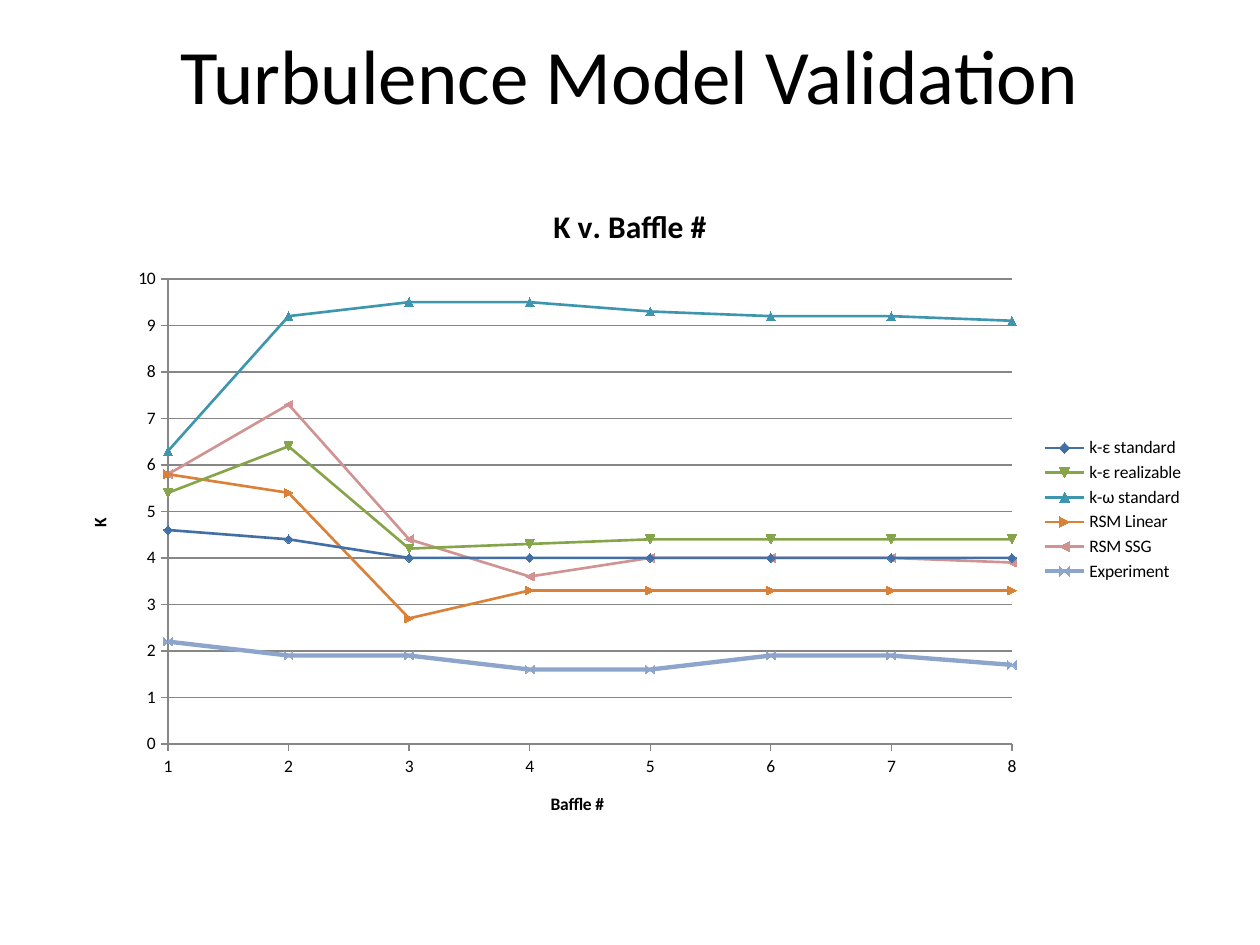
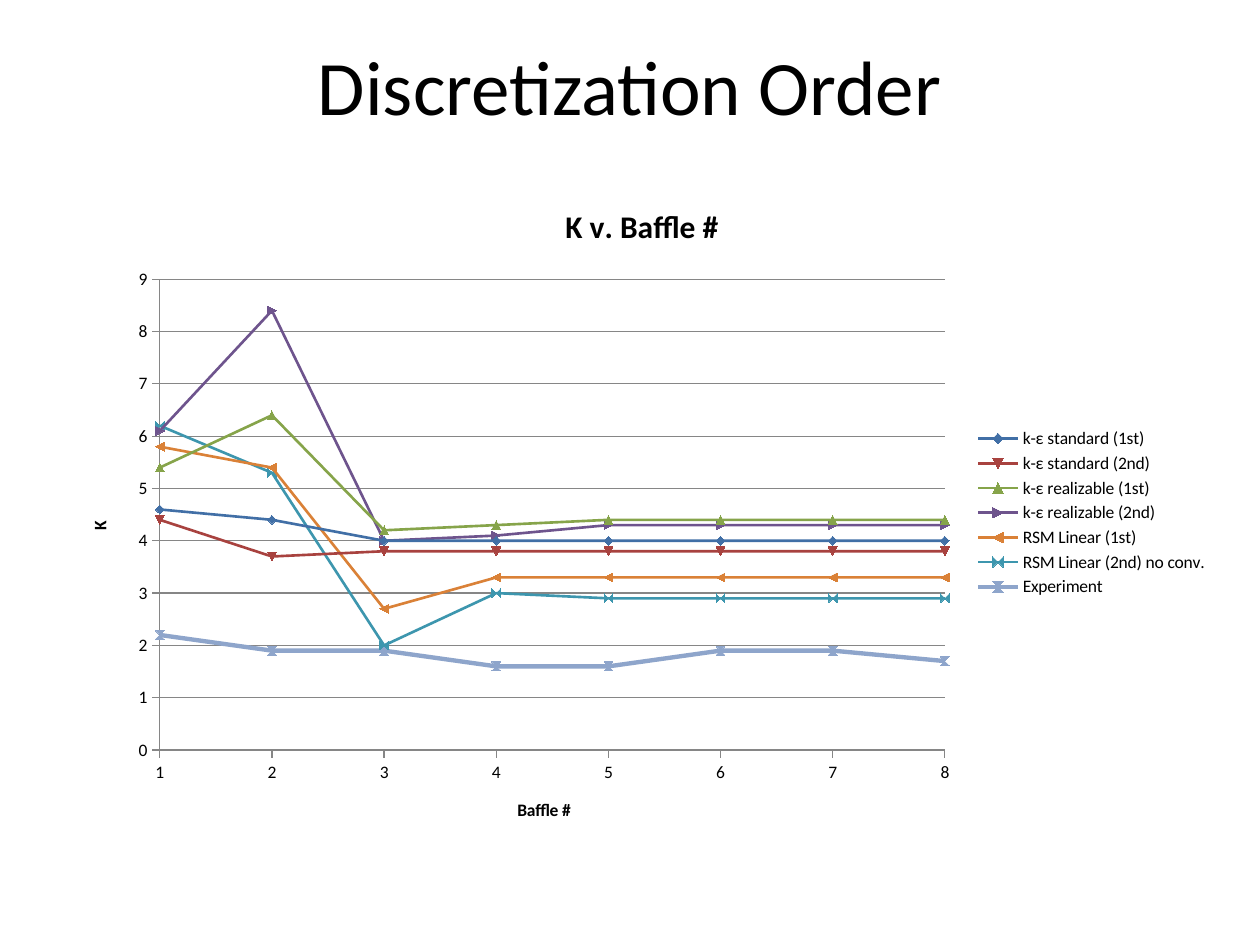
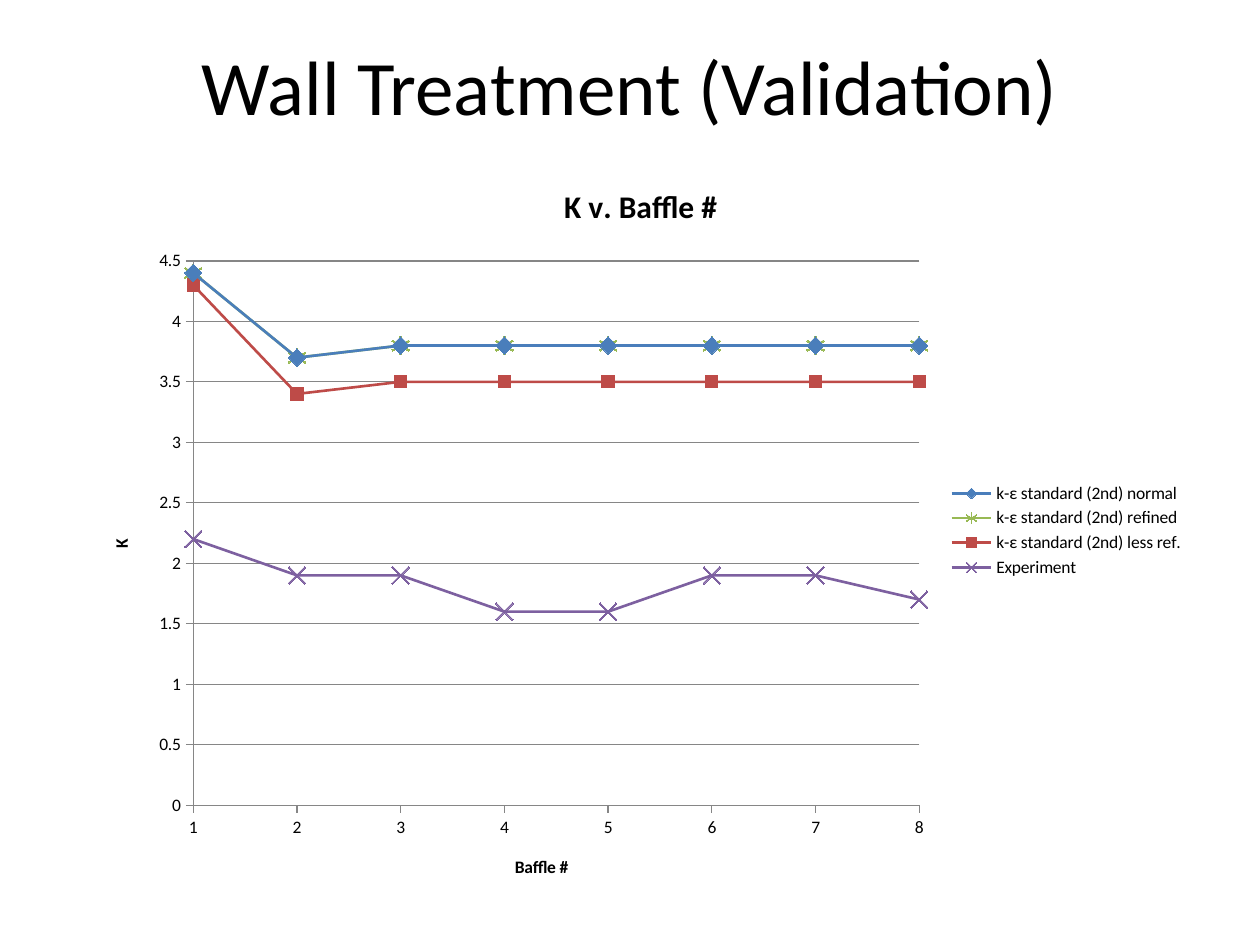
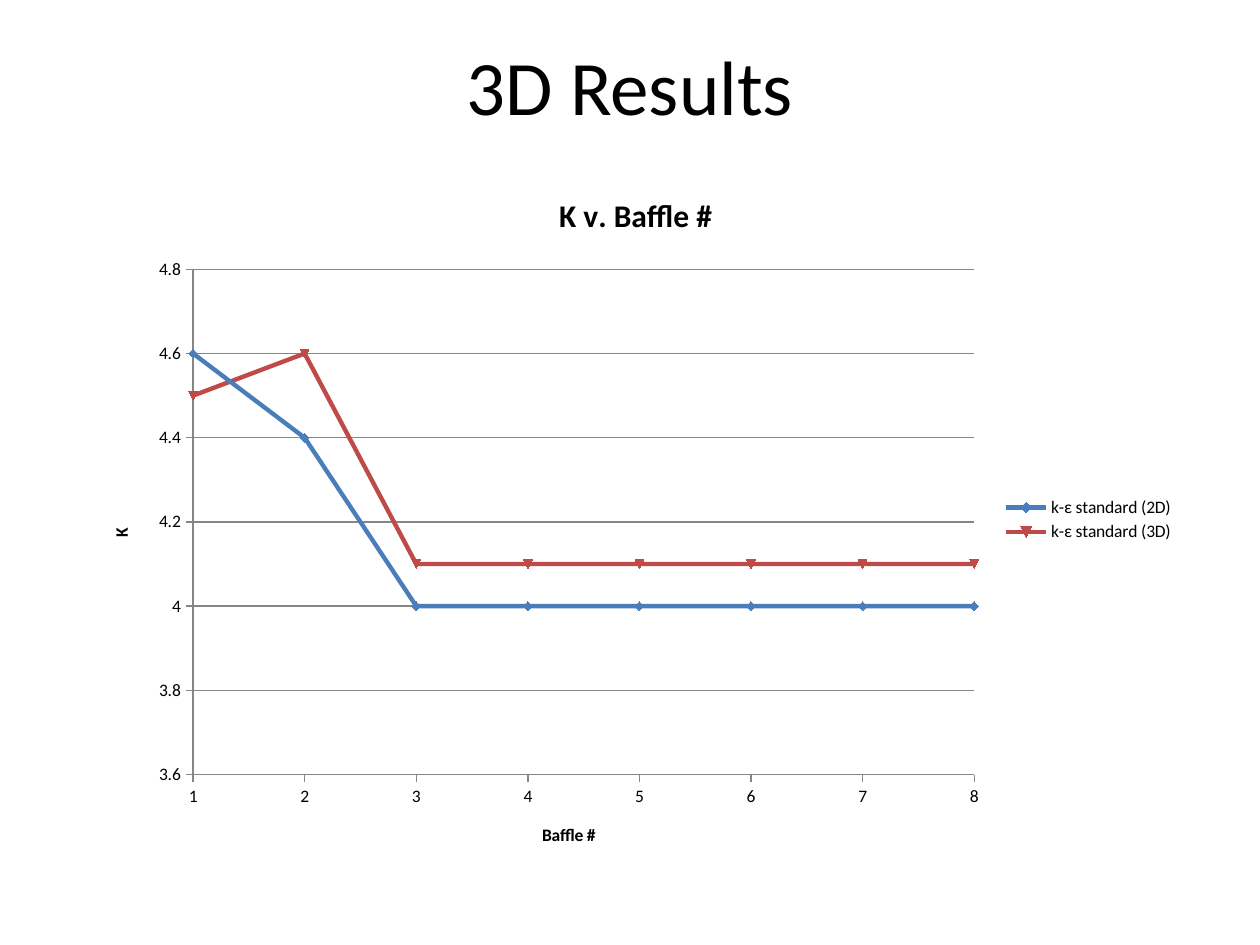
import pptx
import pptx.util
import pptx.dml.color
import pptx.chart.data
import pptx.enum.chart
import pptx.enum.text

Inches = pptx.util.Inches
Pt = pptx.util.Pt
MARK = pptx.enum.chart.XL_MARKER_STYLE

HUES = {
    "text": "000000", "grid": "868686",
    "blue": "416FA6", "red": "A8423F", "green": "86A44A", "purple": "6E548D",
    "teal": "3D96AE", "orange": "DA8137", "pink": "D19392", "pale": "8EA5CB",
    "sky": "4A7EBB", "brick": "BE4B48", "lime": "98B954", "violet": "7D60A0",
}
FONT = "Calibri"
THIN, THICK = 1.5, 2.5

STANDARD = [4.6, 4.4, 4, 4, 4, 4, 4, 4]
SECOND = [4.4, 3.7, 3.8, 3.8, 3.8, 3.8, 3.8, 3.8]
REAL = [5.4, 6.4, 4.2, 4.3, 4.4, 4.4, 4.4, 4.4]
LINEAR = [5.8, 5.4, 2.7, 3.3, 3.3, 3.3, 3.3, 3.3]
TEST = [2.2, 1.9, 1.9, 1.6, 1.6, 1.9, 1.9, 1.7]

SLIDES = [
    dict(title="Turbulence Model Validation", height=0.83,
         box=(0.5, 1.42, 9, 5.25), scale=(0, 10, 1), series=[
             ("k-ε standard", STANDARD, "blue", THIN, None),
             ("k-ε realizable", REAL, "green", THIN, None),
             ("k-ω standard", [6.3, 9.2, 9.5, 9.5, 9.3, 9.2, 9.2, 9.1], "teal", THIN, None),
             ("RSM Linear", LINEAR, "orange", THIN, None),
             ("RSM SSG", [5.8, 7.3, 4.4, 3.6, 4, 4, 4, 3.9], "pink", THIN, None),
             ("Experiment", TEST, "pale", THICK, None)]),
    dict(title="Discretization Order", height=1,
         box=(0.5, 1.42, 9.19, 5.3), scale=(0, 9, 1), series=[
             ("k-ε standard (1st)", STANDARD, "blue", THIN, None),
             ("k-ε standard (2nd)", SECOND, "red", THIN, None),
             ("k-ε realizable (1st)", REAL, "green", THIN, None),
             ("k-ε realizable (2nd)", [6.1, 8.4, 4, 4.1, 4.3, 4.3, 4.3, 4.3], "purple", THIN, None),
             ("RSM Linear (1st)", LINEAR, "orange", THIN, None),
             ("RSM Linear (2nd) no conv.", [6.2, 5.3, 2, 3, 2.9, 2.9, 2.9, 2.9], "teal", THIN, None),
             ("Experiment", TEST, "pale", THICK, None)]),
    dict(title="Wall Treatment (Validation)", height=1,
         box=(0.67, 1.25, 8.83, 5.92), scale=(0, 4.5, 0.5), series=[
             ("k-ε standard (2nd) normal", SECOND, "sky", THIN, (MARK.DIAMOND, 10)),
             ("k-ε standard (2nd) refined", SECOND, "lime", THIN, (MARK.STAR, 10)),
             ("k-ε standard (2nd) less ref.", [4.3, 3.4, 3.5, 3.5, 3.5, 3.5, 3.5, 3.5],
              "brick", THIN, (MARK.SQUARE, 7)),
             ("Experiment", TEST, "violet", THIN, (MARK.X, 10))]),
    dict(title="3D Results", height=1,
         box=(0.67, 1.33, 8.75, 5.59), scale=(3.6, 4.8, 0.2), series=[
             ("k-ε standard (2D)", STANDARD, "sky", THICK, None),
             ("k-ε standard (3D)", [4.5, 4.6, 4.1, 4.1, 4.1, 4.1, 4.1, 4.1], "brick", THICK, None)]),
]


def tint(name):
    return pptx.dml.color.RGBColor.from_string(HUES[name])


def style(font, size, bold=False):
    font.name = FONT
    font.size = Pt(size)
    font.bold = bold
    font.color.rgb = tint("text")


def write(frame, text, size=10, bold=True):
    para = frame.paragraphs[0]
    para.alignment = pptx.enum.text.PP_ALIGN.CENTER
    run = para.add_run()
    run.text = text
    style(run.font, size, bold)


def stroke(line, hue, width):
    line.color.rgb = tint(hue)
    line.width = Pt(width)


def head(slide, text, height):
    title = slide.shapes.title
    title.left, title.top, title.width, title.height = map(Inches, (0.5, 0.17, 9, height))
    title.text_frame.vertical_anchor = pptx.enum.text.MSO_ANCHOR.MIDDLE
    write(title.text_frame, text, size=44, bold=False)


def set_axis(axis, text, low, high, step):
    axis.minimum_scale, axis.maximum_scale, axis.major_unit = low, high, step
    axis.major_tick_mark = pptx.enum.chart.XL_TICK_MARK.OUTSIDE
    axis.tick_labels.number_format = "General"
    axis.tick_labels.number_format_is_linked = False
    style(axis.tick_labels.font, 10)
    stroke(axis.format.line, "grid", 0.75)
    write(axis.axis_title.text_frame, text)


def set_line(line, hue, width, mark):
    line.smooth = True
    stroke(line.format.line, hue, width)
    if mark:
        line.marker.style, line.marker.size = mark
        look = line.marker.format
        look.fill.solid()
        look.fill.fore_color.rgb = tint(hue)
        stroke(look.line, hue, 0.75)


def plot(slide, box, scale, series):
    data = pptx.chart.data.XyChartData()
    for name, values, *_ in series:
        item = data.add_series(name)
        for baffle, value in enumerate(values, 1):
            item.add_data_point(baffle, value)
    kind = pptx.enum.chart.XL_CHART_TYPE.XY_SCATTER_SMOOTH
    chart = slide.shapes.add_chart(kind, *map(Inches, box), data).chart
    style(chart.font, 10)
    write(chart.chart_title.text_frame, "K v. Baffle #", size=18)
    chart.has_legend = True
    chart.legend.position = pptx.enum.chart.XL_LEGEND_POSITION.RIGHT
    chart.legend.include_in_layout = False
    style(chart.legend.font, 10)
    set_axis(chart.category_axis, "Baffle #", 1, 8, 1)
    set_axis(chart.value_axis, "K", *scale)
    chart.category_axis.has_major_gridlines = False
    chart.value_axis.has_major_gridlines = True
    stroke(chart.value_axis.major_gridlines.format.line, "grid", 0.75)
    chart.plots[0].vary_by_categories = False
    for line, (_, _, hue, width, mark) in zip(chart.plots[0].series, series):
        set_line(line, hue, width, mark)


def main():
    deck = pptx.Presentation()
    deck.slide_width, deck.slide_height = Inches(10), Inches(7.5)
    for page in SLIDES:
        slide = deck.slides.add_slide(deck.slide_layouts[5])
        head(slide, page["title"], page["height"])
        plot(slide, page["box"], page["scale"], page["series"])
    deck.save("out.pptx")


if __name__ == "__main__":
    main()
